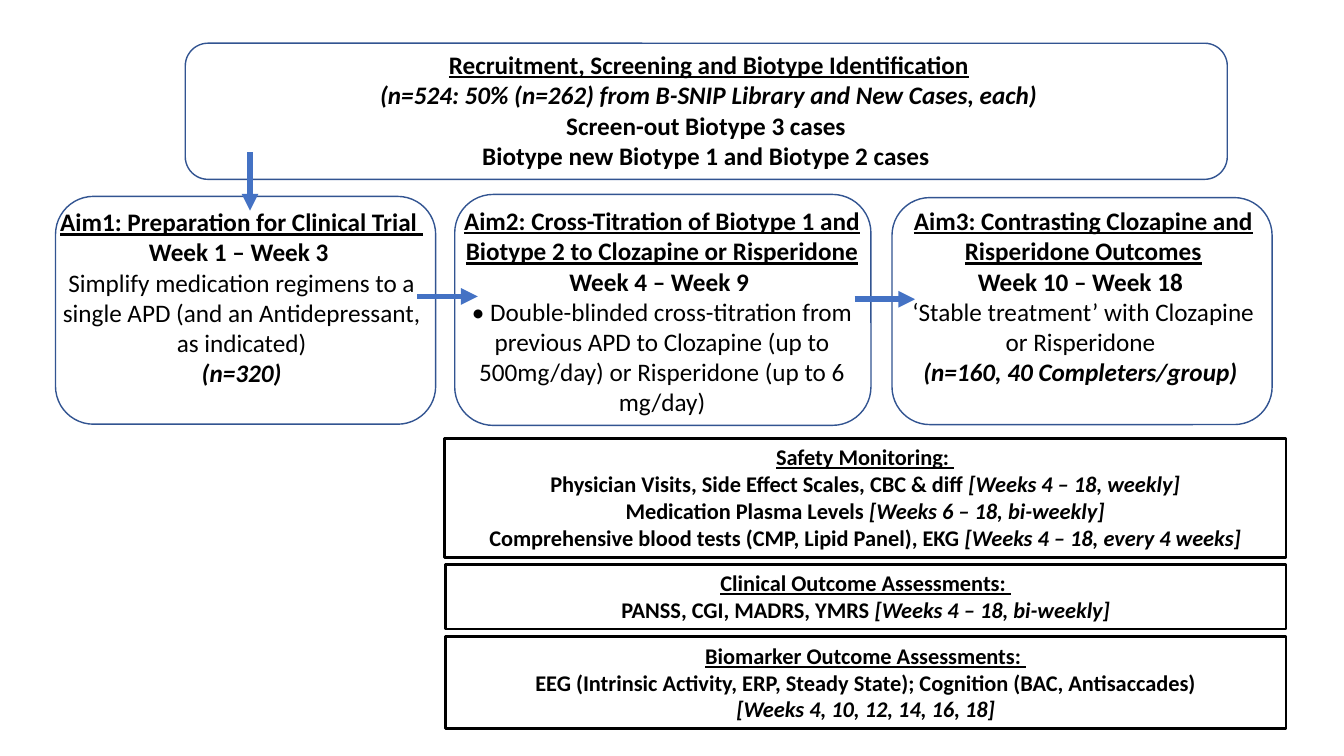
from lxml import etree
from pptx import Presentation
from pptx.dml.color import RGBColor
from pptx.enum.shapes import MSO_CONNECTOR as Connector, MSO_SHAPE as Shape
from pptx.enum.text import MSO_ANCHOR as Anchor, MSO_AUTO_SIZE as AutoSize, PP_ALIGN as Align
from pptx.oxml.ns import qn
from pptx.util import Cm, Pt

BLACK = RGBColor(0x00, 0x00, 0x00)
WHITE = RGBColor(0xFF, 0xFF, 0xFF)
ARROW_BLUE = RGBColor(0x44, 0x72, 0xC4)
OUTLINE_BLUE = RGBColor(0x32, 0x54, 0x91)

# Each paragraph is a list of (text, style): b bold, i italic, u underlined
RECRUITMENT = [
    [("Recruitment, Screening and Biotype Identification", "bu")],
    [("(n=524: 50% (n=262) from B-SNIP Library and New Cases, each)", "bi")],
    [("Screen-out Biotype 3 cases ", "b")],
    [("Biotype new Biotype 1 and Biotype 2 cases ", "b")],
]
AIM_1 = [
    [("Aim1: Preparation for Clinical Trial ", "bu")],
    [("Week 1 – Week 3 ", "b")],
    [("Simplify medication regimens to a single APD "
      "(and an Antidepressant, as indicated)", "")],
    [("(n=320)", "bi")],
]
AIM_2 = [
    [("Aim2: Cross-Titration of Biotype 1 and Biotype 2 "
      "to Clozapine or Risperidone", "bu")],
    [("Week 4 – Week 9 ", "b")],
    [("• Double-blinded cross-titration from previous APD to Clozapine "
      "(up to 500mg/day) or Risperidone (up to 6 mg/day)", "")],
]
AIM_3 = [
    [("Aim3: Contrasting Clozapine and Risperidone Outcomes", "bu")],
    [("Week 10 – Week 18 ", "b")],
    [("‘Stable treatment’ with Clozapine or Risperidone ", "")],
    [("(n=160, 40 Completers/group) ", "bi")],
]
SAFETY = [
    [("Safety Monitoring: ", "bu")],
    [("Physician Visits, Side Effect Scales, CBC & diff ", "b"),
     ("[Weeks 4 – 18, weekly]", "bi")],
    [("Medication Plasma Levels ", "b"), ("[Weeks 6 – 18, bi-weekly]", "bi")],
    [("Comprehensive blood tests (CMP, Lipid Panel), EKG ", "b"),
     ("[Weeks 4 – 18, every 4 weeks]", "bi")],
]
CLINICAL = [
    [("Clinical Outcome Assessments: ", "bu")],
    [("PANSS, CGI, MADRS, YMRS ", "b"), ("[Weeks 4 – 18, bi-weekly]", "bi")],
]
BIOMARKER = [
    [("Biomarker Outcome Assessments: ", "bu")],
    [("EEG (Intrinsic Activity, ERP, Steady State); "
      "Cognition (BAC, Antisaccades)", "b")],
    [("[Weeks 4, 10, 12, 14, 16, 18]", "bi")],
]

# Outline area, text area (left, top, width, height in cm) and text
STAGES = [
    ((4.67, 1.09, 26.26, 3.43), (3.4, 1.12, 28.93, 3.33), RECRUITMENT),
    ((1.4, 4.95, 9.58, 5.74), (1.19, 5.08, 9.8, 4.88), AIM_1),
    ((11.46, 4.9, 10.49, 5.82), (11.35, 5.05, 10.67, 5.64), AIM_2),
    ((22.48, 4.98, 9.58, 5.72), (22.4, 5.05, 9.8, 4.88), AIM_3),
]
ASSESSMENTS = [
    ((11.2, 11.05, 21.21, 3.0), SAFETY),
    ((11.23, 14.22, 21.18, 1.63), CLINICAL),
    ((11.23, 16.05, 21.18, 2.31), BIOMARKER),
]
ARROWS = [
    ((6.3, 3.84), (6.3, 5.31)),
    ((10.52, 7.47), (12.04, 7.47)),
    ((21.54, 7.54), (23.06, 7.54)),
]


class FlowPage:
    font_name = "Calibri"
    stage_size = Pt(18)
    assessment_size = Pt(16)

    def __init__(self, deck):
        self.shapes = deck.slides.add_slide(deck.slide_layouts[6]).shapes

    def add_text(self, box, paragraphs, size):
        frame = box.text_frame
        frame.word_wrap = True
        frame.auto_size = AutoSize.SHAPE_TO_FIT_TEXT
        frame.vertical_anchor = Anchor.TOP
        for index, spans in enumerate(paragraphs):
            para = frame.add_paragraph() if index else frame.paragraphs[0]
            para.alignment = Align.CENTER
            for text, style in spans:
                span = para.add_run()
                span.text = text
                font = span.font
                font.name, font.size = self.font_name, size
                font.color.rgb = BLACK
                font.bold = "b" in style
                font.italic = "i" in style
                font.underline = "u" in style

    def outline(self, kind, area, color, width):
        box = self.shapes.add_shape(kind, *map(Cm, area))
        box.shadow.inherit = False
        box.fill.background()
        box.line.color.rgb = color
        box.line.width = Pt(width)
        return box

    def stage(self, area, text_area, paragraphs):
        """Rounded outline with its text in a separate box on top."""
        self.outline(Shape.ROUNDED_RECTANGLE, area, OUTLINE_BLUE, 1)
        label = self.shapes.add_textbox(*map(Cm, text_area))
        self.add_text(label, paragraphs, self.stage_size)

    def assessment(self, area, paragraphs):
        box = self.outline(Shape.RECTANGLE, area, BLACK, 2)
        box.fill.solid()
        box.fill.fore_color.rgb = WHITE
        self.add_text(box, paragraphs, self.assessment_size)

    def arrow(self, start, end):
        link = self.shapes.add_connector(Connector.STRAIGHT, *map(Cm, start + end))
        link.line.color.rgb = ARROW_BLUE
        link.line.width = Pt(4)
        properties = link.element.spPr
        etree.SubElement(properties.find(qn("a:ln")), qn("a:tailEnd"), type="triangle")
        etree.SubElement(properties, qn("a:effectLst"))


def main():
    deck = Presentation()
    deck.slide_width, deck.slide_height = Cm(33.87), Cm(19.05)
    page = FlowPage(deck)
    for area, text_area, paragraphs in STAGES:
        page.stage(area, text_area, paragraphs)
    for start, end in ARROWS:
        page.arrow(start, end)
    for area, paragraphs in ASSESSMENTS:
        page.assessment(area, paragraphs)
    deck.save("out.pptx")


if __name__ == "__main__":
    main()
